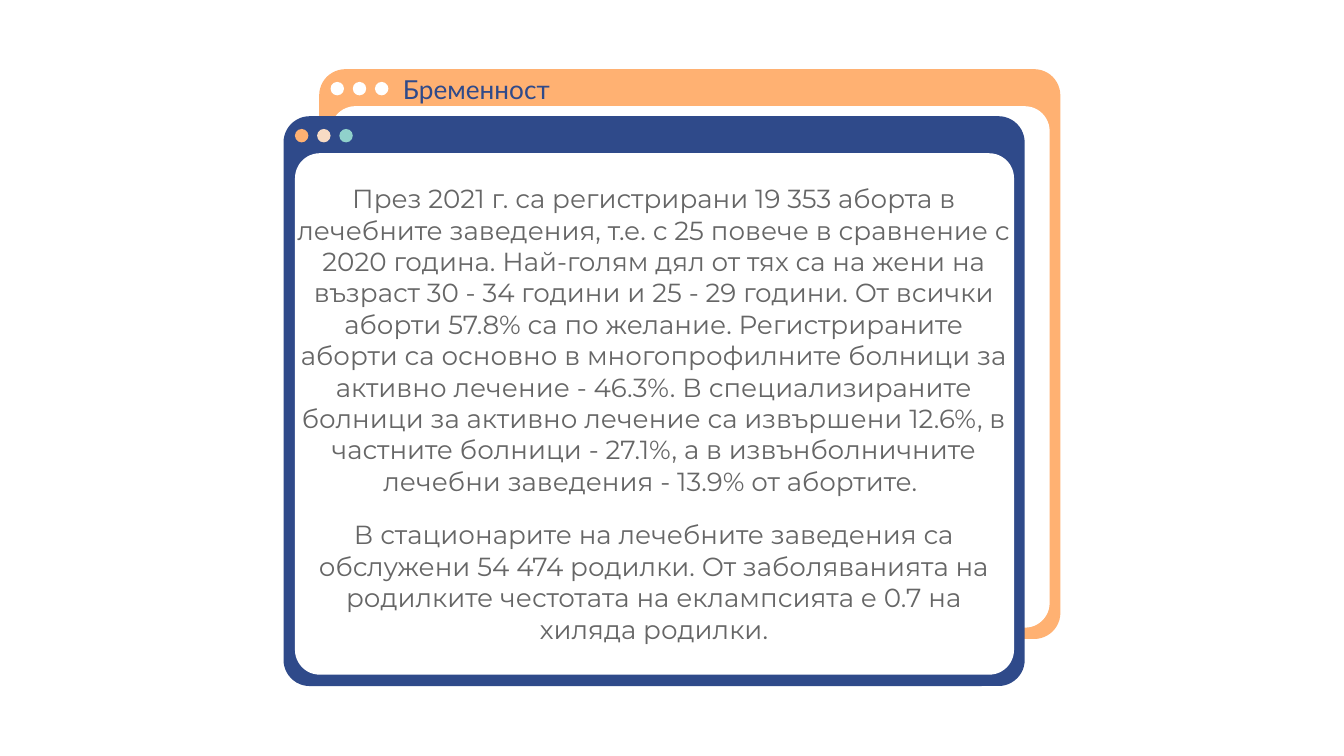
import dataclasses

import pptx
import pptx.dml.color
import pptx.enum.shapes
import pptx.enum.text
import pptx.util

PX = 4572  # EMU in one px, 200 px to the inch


@dataclasses.dataclass(frozen=True)
class Theme:
    white: str = "FFFFFF"
    orange: str = "FFB172"
    navy: str = "2F4A8A"
    peach: str = "F8DBC4"
    mint: str = "90D1CB"
    grey: str = "666666"
    title_font: str = "Lato"
    body_font: str = "Montserrat"
    text_size: int = 14
    paragraph_gap: int = 12


@dataclasses.dataclass(frozen=True)
class Box:
    left: int
    top: int
    width: int
    height: int

    def inside(self, left, top, width, height):
        return Box(self.left + left, self.top + top, width, height)

    def emu(self):
        return [side * PX for side in dataclasses.astuple(self)]


THEME = Theme()
SHAPES = pptx.enum.shapes.MSO_SHAPE
ALIGN = pptx.enum.text.PP_ALIGN

TITLE = "Бременност"
BODY = [
    "През 2021 г. са регистрирани 19 353 аборта в лечебните заведения, "
    "т.е. с 25 повече в сравнение с 2020 година. Най-голям дял от тях са "
    "на жени на възраст 30 - 34 години и 25 - 29 години. От всички аборти "
    "57.8% са по желание. Регистрираните аборти са основно в "
    "многопрофилните болници за активно лечение - 46.3%. В "
    "специализираните болници за активно лечение са извършени 12.6%, в "
    "частните болници - 27.1%, а в извънболничните лечебни заведения - "
    "13.9% от абортите. ",
    "В стационарите на лечебните заведения са обслужени 54 474 родилки. "
    "От заболяванията на родилките честотата на еклампсията е 0.7 на "
    "хиляда родилки.",
]


def add_filled(page, kind, box, color, radius=None):
    shape = page.shapes.add_shape(kind, *box.emu())
    shape.shadow.inherit = False
    shape.fill.solid()
    shape.fill.fore_color.rgb = pptx.dml.color.RGBColor.from_string(color)
    shape.line.fill.background()
    if radius is not None:
        shape.adjustments[0] = radius / min(box.width, box.height)


def add_text(page, box, texts, font, color, align, inset):
    frame = page.shapes.add_textbox(*box.emu()).text_frame
    frame.word_wrap = True
    frame.margin_left = frame.margin_right = 20 * PX
    frame.margin_top = frame.margin_bottom = inset * PX
    frame.text = "\n".join(texts)
    for para in frame.paragraphs:
        para.alignment = align
        for span in para.runs:
            span.font.name = font
            span.font.size = pptx.util.Pt(THEME.text_size)
            span.font.color.rgb = pptx.dml.color.RGBColor.from_string(color)
    return frame


def add_window(page, box, frame_color, dot_colors):
    # Frame and white pane
    add_filled(page, SHAPES.ROUNDED_RECTANGLE, box, frame_color, radius=39)
    pane = box.inside(17, 55, box.width - 33, box.height - 72)
    add_filled(page, SHAPES.ROUNDED_RECTANGLE, pane, THEME.white, radius=37)
    # Title bar dots
    for index, color in enumerate(dot_colors):
        dot = box.inside(17 + 33 * index, 19, 20, 20)
        add_filled(page, SHAPES.OVAL, dot, color)


def add_body(page, box):
    frame = add_text(page, box, BODY, THEME.body_font, THEME.grey,
                     ALIGN.CENTER, inset=20)
    for para in frame.paragraphs:
        para.space_after = pptx.util.Pt(THEME.paragraph_gap)


def add_title(page, box):
    add_text(page, box, [TITLE], THEME.title_font, THEME.navy,
             ALIGN.LEFT, inset=10)


def main():
    deck = pptx.Presentation()
    deck.slide_width, deck.slide_height = 2000 * PX, 1125 * PX
    page = deck.slides.add_slide(deck.slide_layouts[6])

    back = Box(475, 103, 1103, 848)
    front = back.inside(-53, 70, back.width, back.height)
    add_window(page, back, THEME.orange, [THEME.white] * 3)
    add_window(page, front, THEME.navy, [THEME.orange, THEME.peach, THEME.mint])
    add_body(page, front.inside(0, 79, front.width, 732))
    add_title(page, back.inside(105, -3, 290, 68))

    deck.save("out.pptx")


if __name__ == "__main__":
    main()
